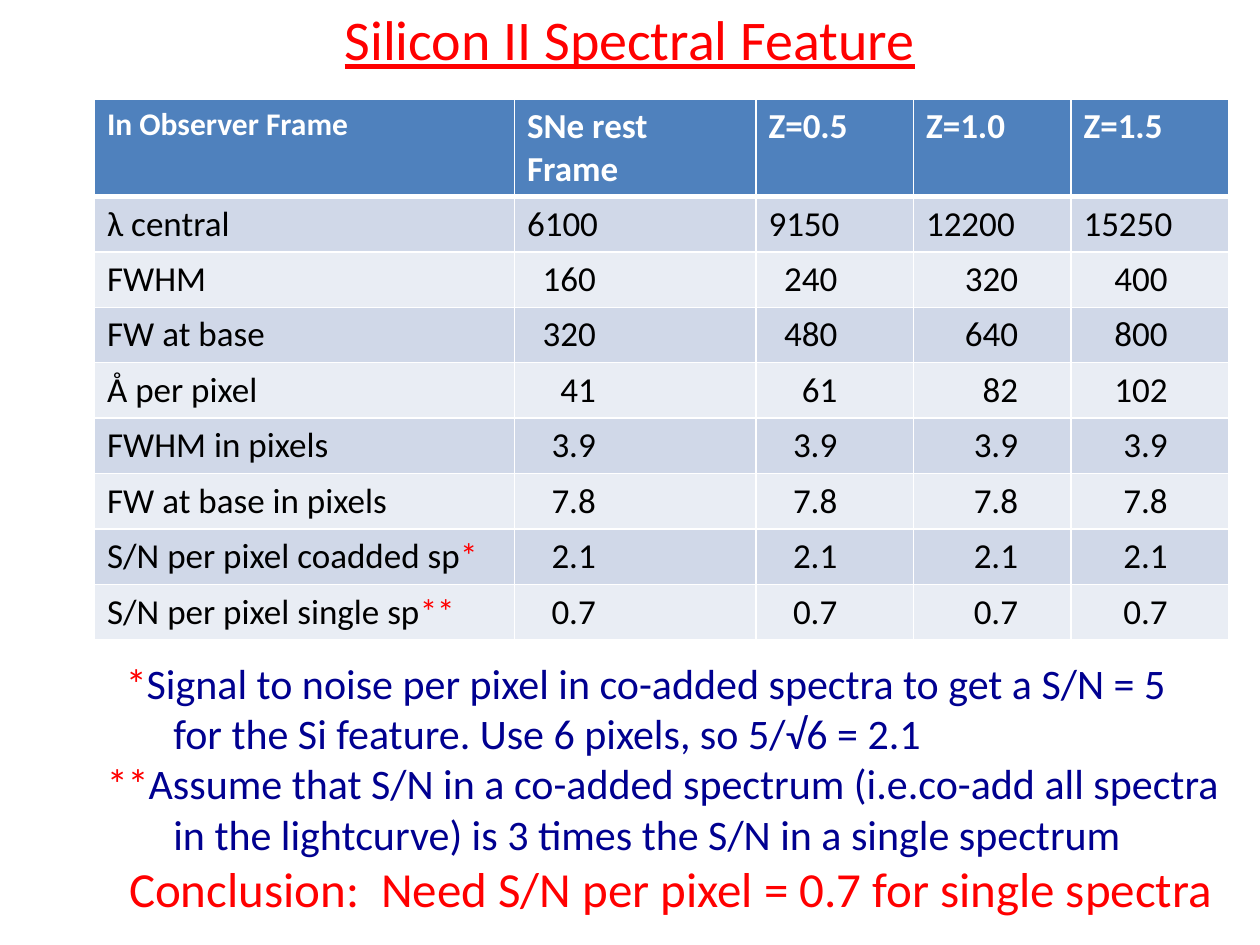
import pptx
import pptx.util
import pptx.dml.color
import pptx.enum.text
import pptx.oxml.ns
from lxml import etree

Pt = pptx.util.Pt
ALIGN = pptx.enum.text.PP_ALIGN
ANCHOR = pptx.enum.text.MSO_ANCHOR

COLORS = {
    "red": "FF0000",
    "navy": "000090",
    "black": "000000",
    "white": "FFFFFF",
    "header": "4F81BD",
    "odd": "D0D8E8",
    "even": "E9EDF4",
}

HEADINGS = ["In Observer Frame", "SNe rest Frame", "Z=0.5", "Z=1.0", "Z=1.5"]
MEASURES = [
    ("λ central", "", ["6100", "9150", "12200", "15250"]),
    ("FWHM", "", ["160", "240", "320", "400"]),
    ("FW at base", "", ["320", "480", "640", "800"]),
    ("Å per pixel", "", ["41", "61", "82", "102"]),
    ("FWHM in pixels", "", ["3.9"] * 4),
    ("FW at base in pixels", "", ["7.8"] * 4),
    ("S/N per pixel coadded sp", "*", ["2.1"] * 4),
    ("S/N per pixel single sp", "**", ["0.7"] * 4),
]
COLUMN_WIDTHS = [240, 138, 90, 90, 90]
VALUE_MARGINS = [91.5, 43.5, 30.2, 34.7]
HEADER_HEIGHT, ROW_HEIGHT = 55.8, 31.68

NOTES = [
    (10.8, 24, [("*", "red"),
                ("Signal to noise per pixel in co-added spectra to get a S/N = 5", "navy")]),
    (38, 24, [("for the Si feature. Use 6 pixels, so 5/√6 = 2.1", "navy")]),
    (0, 24, [("**", "red"),
             ("Assume that S/N in a co-added spectrum (i.e.co-add all spectra", "navy")]),
    (38, 24, [("in the lightcurve) is 3 times the S/N in a single spectrum", "navy")]),
    (12.7, 28, [("Conclusion:  Need S/N per pixel = 0.7 for single spectra", "red")]),
]


def rgb(color):
    return pptx.dml.color.RGBColor.from_string(COLORS[color])


def write(paragraph, pieces, size, bold=False, underline=False):
    for words, color in pieces:
        run = paragraph.add_run()
        run.text = words
        run.font.name = "Calibri"
        run.font.size = Pt(size)
        run.font.bold = bold
        run.font.underline = underline
        run.font.color.rgb = rgb(color)


def add_text_area(slide, left, top, width, height):
    frame = slide.shapes.add_textbox(Pt(left), Pt(top), Pt(width), Pt(height)).text_frame
    frame.word_wrap = True
    return frame


def add_title(slide):
    frame = add_text_area(slide, 36, -23, 648, 90)
    frame.vertical_anchor = ANCHOR.MIDDLE
    title = frame.paragraphs[0]
    title.alignment = ALIGN.CENTER
    write(title, [("Silicon II Spectral Feature", "red")], 32, underline=True)


def add_notes(slide):
    frame = add_text_area(slide, 54, 372, 656, 158)
    for number, (indent, size, pieces) in enumerate(NOTES):
        note = frame.add_paragraph() if number else frame.paragraphs[0]
        note._p.get_or_add_pPr().set("marL", str(Pt(indent)))
        write(note, pieces, size)


def style_cell(cell, fill, top=1, bottom=1):
    properties = cell._tc.get_or_add_tcPr()
    qn = pptx.oxml.ns.qn
    for side, weight in (("lnL", 1), ("lnR", 1), ("lnT", top), ("lnB", bottom)):
        border = etree.SubElement(properties, qn("a:" + side), w=str(Pt(weight)))
        solid = etree.SubElement(border, qn("a:solidFill"))
        etree.SubElement(solid, qn("a:srgbClr"), val=COLORS["white"])
    cell.fill.solid()
    cell.fill.fore_color.rgb = rgb(fill)


def add_measures(slide):
    rows = len(MEASURES) + 1
    height = HEADER_HEIGHT + ROW_HEIGHT * len(MEASURES)
    table = slide.shapes.add_table(rows, len(HEADINGS), Pt(54), Pt(56.5),
                                   Pt(sum(COLUMN_WIDTHS)), Pt(height)).table
    for column, width in zip(table.columns, COLUMN_WIDTHS):
        column.width = Pt(width)
    for number, row in enumerate(table.rows):
        row.height = Pt(ROW_HEIGHT if number else HEADER_HEIGHT)

    for column, heading in enumerate(HEADINGS):
        cell = table.cell(0, column)
        style_cell(cell, "header", bottom=3)
        write(cell.text_frame.paragraphs[0], [(heading, "white")],
              20 if column else 18, bold=True)

    for row, (label, mark, values) in enumerate(MEASURES, start=1):
        fill = "odd" if row % 2 else "even"
        for column, words in enumerate([label] + values):
            cell = table.cell(row, column)
            style_cell(cell, fill, top=3 if row == 1 else 1)
            paragraph = cell.text_frame.paragraphs[0]
            write(paragraph, [(words, "black")], 20)
            if column and row > 1:
                paragraph.alignment = ALIGN.RIGHT
                cell.margin_right = Pt(VALUE_MARGINS[column - 1])
            elif mark:
                write(paragraph, [(mark, "red")], 20)


def main():
    deck = pptx.Presentation()
    deck.slide_width, deck.slide_height = Pt(720), Pt(540)
    slide = deck.slides.add_slide(deck.slide_layouts[6])
    add_title(slide)
    add_measures(slide)
    add_notes(slide)
    deck.save("out.pptx")


if __name__ == "__main__":
    main()
